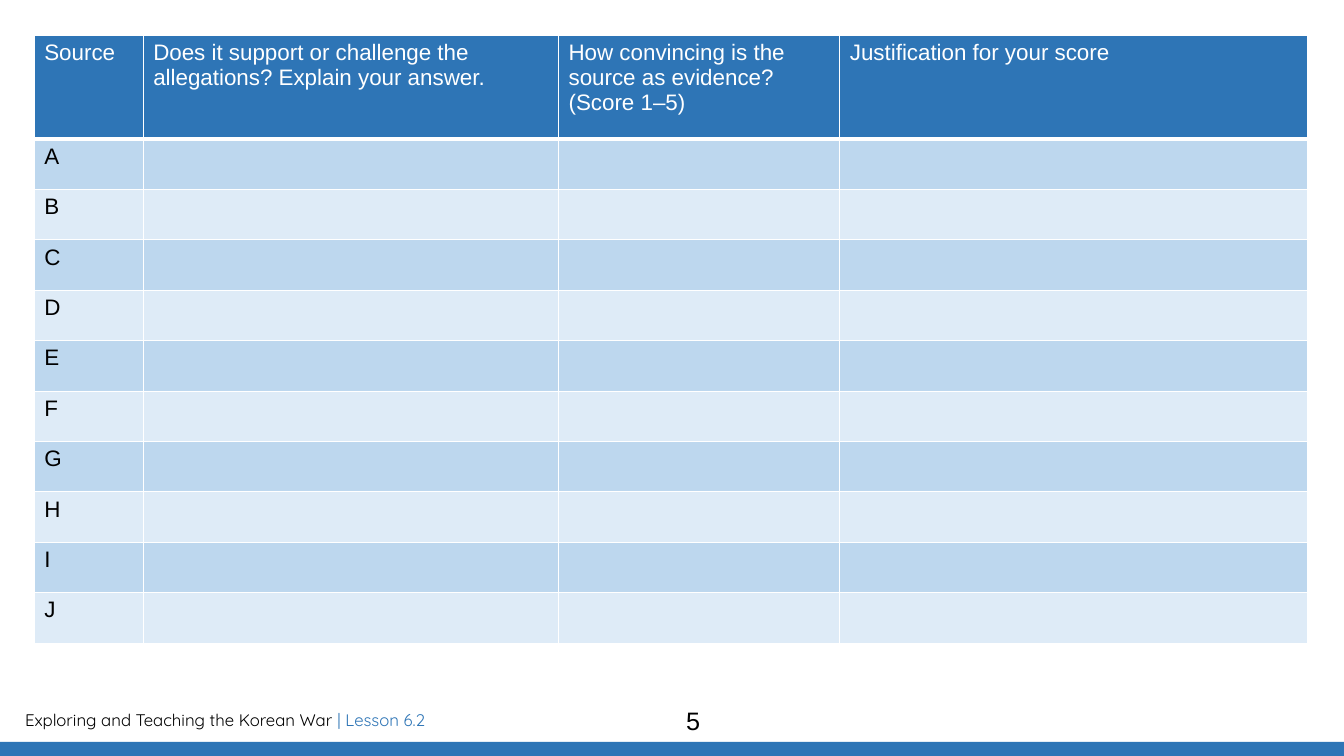
import dataclasses

import pptx
import pptx.dml.color
import pptx.enum.shapes
import pptx.enum.text
import pptx.oxml
import pptx.oxml.ns
import pptx.util

WIDE, HIGH = 13.33, 7.5
COLS = (1.08, 4.12, 2.79, 4.64)
HEAD_ROW, BODY_ROW = 1.03, 0.5
HEADS = (
    "Source",
    "Does it support or challenge the allegations? Explain your answer.",
    "How convincing is the source as evidence? (Score 1–5)",
    "Justification for your score",
)
SOURCES = "ABCDEFGHIJ"


@dataclasses.dataclass(frozen=True)
class Theme:
    blue: str = "2E75B6"
    bands: tuple = ("BDD7EE", "DEEBF7")
    white: str = "FFFFFF"
    black: str = "000000"
    main: str = "Arial"
    foot: str = "Quicksand"
    cell: int = 16
    small: int = 12
    page: int = 18


THEME = Theme()


def inch(*sizes):
    return [pptx.util.Inches(size) for size in sizes]


def paint(fill, color):
    fill.solid()
    fill.fore_color.rgb = pptx.dml.color.RGBColor.from_string(color)


def style(font, name, size, color):
    font.name = name
    font.size = pptx.util.Pt(size)
    font.bold = False
    font.color.rgb = pptx.dml.color.RGBColor.from_string(color)


def edge(cell, base):
    """Draw white cell borders; base is the bottom width in points."""
    props = cell._tc.get_or_add_tcPr()
    space = pptx.oxml.ns.nsdecls("a")
    for spot, (side, width) in enumerate(zip("LRTB", (1, 1, 1, base))):
        props.insert(spot, pptx.oxml.parse_xml(
            f'<a:ln{side} {space} w="{pptx.util.Pt(width)}"><a:solidFill>'
            f'<a:srgbClr val="{THEME.white}"/></a:solidFill></a:ln{side}>'))


def fill_row(row, texts, back, color, base=1):
    for cell, text in zip(row.cells, texts):
        cell.text = text
        style(cell.text_frame.paragraphs[0].font, THEME.main, THEME.cell, color)
        paint(cell.fill, back)
        edge(cell, base)


def add_grid(slide):
    high = HEAD_ROW + BODY_ROW * len(SOURCES)
    frame = slide.shapes.add_table(
        len(SOURCES) + 1, len(COLS), *inch(0.34, 0.35, sum(COLS), high))
    table = frame.table
    for col, width in zip(table.columns, COLS):
        col.width = pptx.util.Inches(width)
    for row in table.rows:
        row.height = pptx.util.Inches(BODY_ROW)
    table.rows[0].height = pptx.util.Inches(HEAD_ROW)
    fill_row(table.rows[0], HEADS, THEME.blue, THEME.white, base=3)
    for index, source in enumerate(SOURCES):
        texts = [source] + [""] * (len(COLS) - 1)
        fill_row(table.rows[index + 1], texts, THEME.bands[index % 2], THEME.black)


def add_text(slide, box):
    """Add a wrapping text box and return its first paragraph."""
    frame = slide.shapes.add_textbox(*inch(*box)).text_frame
    frame.word_wrap = True
    frame.vertical_anchor = pptx.enum.text.MSO_ANCHOR.MIDDLE
    return frame.paragraphs[0]


def add_foot(slide):
    para = add_text(slide, (0.15, 6.99, 7.82, 0.3))
    parts = (("Exploring and Teaching the Korean War ", THEME.black),
             ("| Lesson 6.2", THEME.blue))
    for text, color in parts:
        run = para.add_run()
        run.text = text
        style(run.font, THEME.foot, THEME.small, color)


def add_bar(slide):
    bar = slide.shapes.add_shape(
        pptx.enum.shapes.MSO_SHAPE.RECTANGLE, *inch(0, HIGH - 0.14, WIDE, 0.14))
    bar.shadow.inherit = False
    paint(bar.fill, THEME.blue)
    bar.line.fill.background()


def add_page(slide, number):
    para = add_text(slide, (4.32, 6.95, 5.11, 0.4))
    para.text = number
    para.alignment = pptx.enum.text.PP_ALIGN.CENTER
    style(para.font, THEME.main, THEME.page, THEME.black)


def main():
    deck = pptx.Presentation()
    deck.slide_width, deck.slide_height = inch(WIDE, HIGH)
    slide = deck.slides.add_slide(deck.slide_layouts.get_by_name("Blank"))
    add_foot(slide)
    add_bar(slide)
    add_grid(slide)
    add_page(slide, "5")
    deck.save("out.pptx")


if __name__ == "__main__":
    main()
